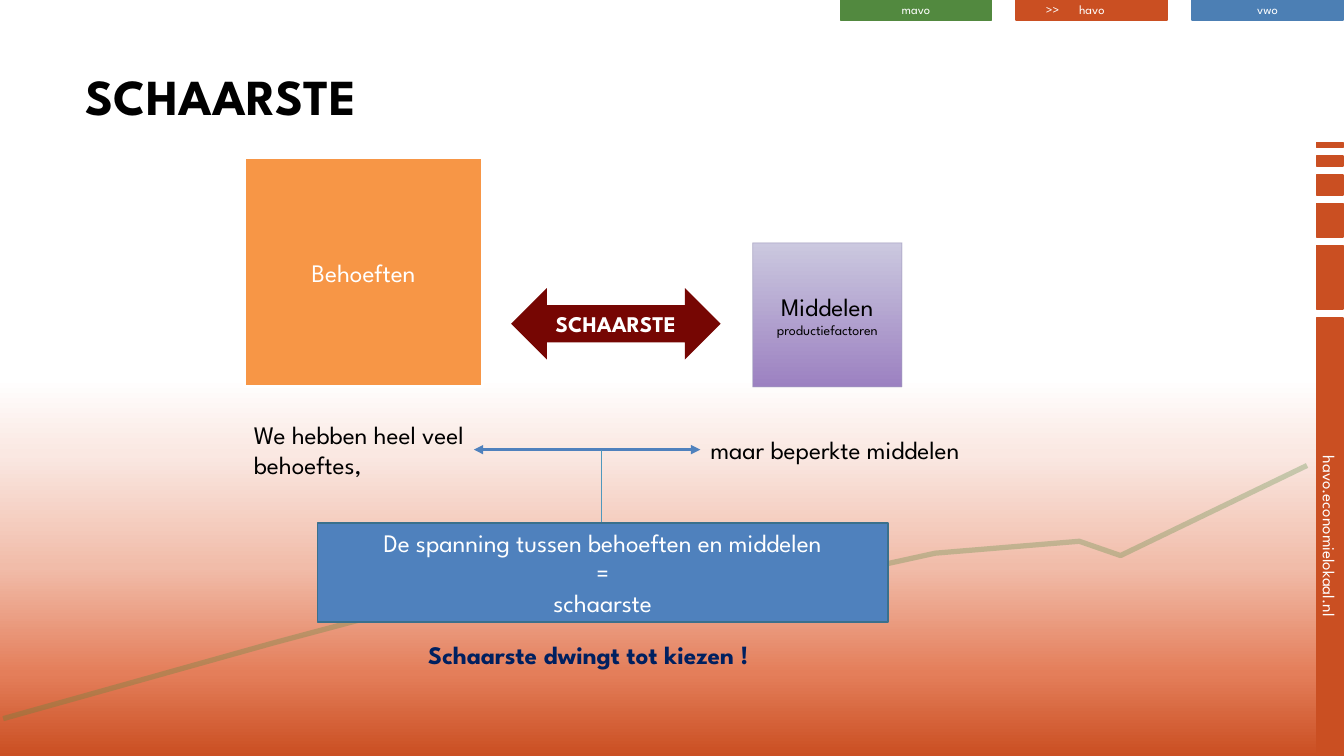
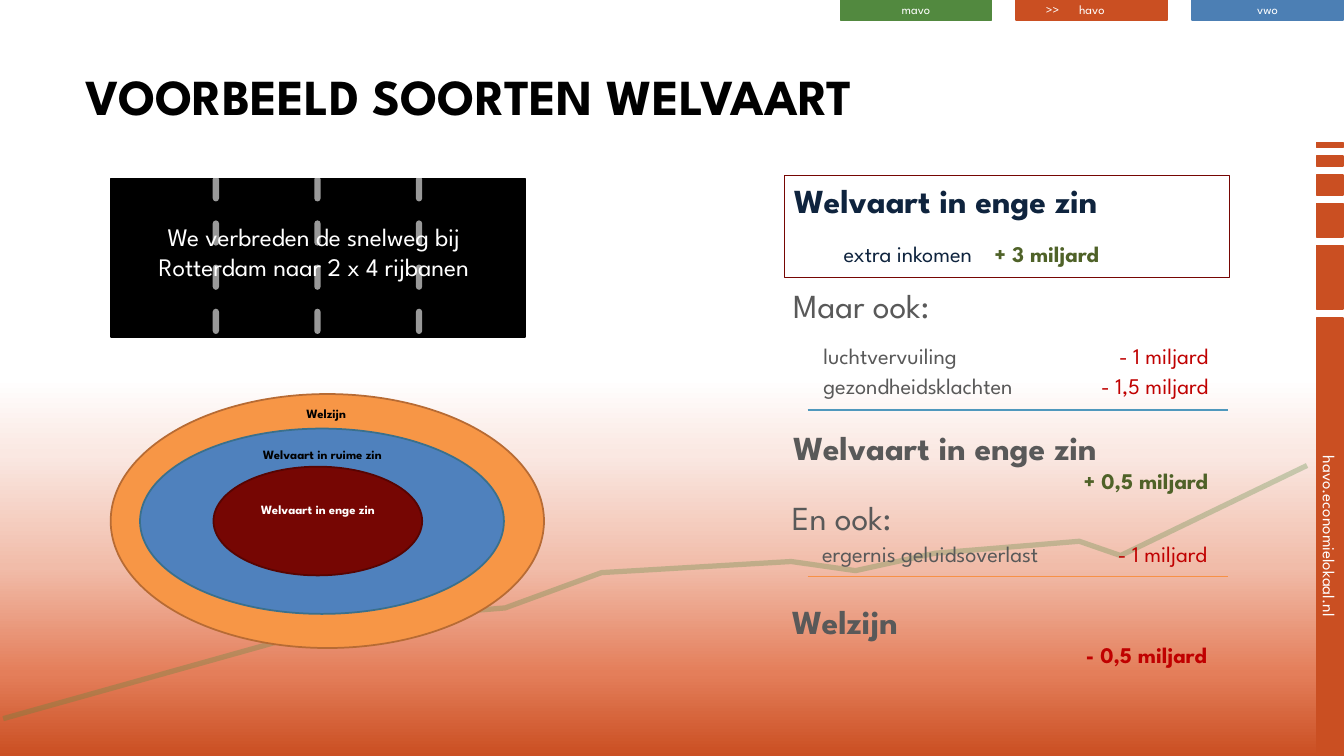
from copy import deepcopy

from lxml import etree
from pptx import Presentation
from pptx import util as u
from pptx.dml.color import RGBColor
from pptx.enum import dml, shapes, text
from pptx.oxml.ns import qn

FONT = "League Spartan"
ORANGE, BLUE, MAROON = "F79646", "4F81BD", "760603"
BRICK, GREEN, STEEL = "CA4F22", "52893F", "4C7FB4"
WHITE, BLACK, GREY = "FFFFFF", "000000", "595959"
RECTANGLE, OVAL = shapes.MSO_SHAPE.RECTANGLE, shapes.MSO_SHAPE.OVAL
STRAIGHT = shapes.MSO_CONNECTOR.STRAIGHT
LEFT, CENTER = text.PP_ALIGN.LEFT, text.PP_ALIGN.CENTER
rgb = RGBColor.from_string


def style(item, fill=None, line=None, width=1.25, opacity=100):
    """Fill and outline a shape or connector, without shadow."""
    if hasattr(item, "fill"):
        if fill:
            item.fill.solid()
            item.fill.fore_color.rgb = rgb(fill)
        else:
            item.fill.background()
    if line:
        item.line.color.rgb = rgb(line)
        item.line.width = u.Pt(width)
        if opacity < 100:
            color = item.element.spPr.find(qn("a:ln")).find(".//" + qn("a:srgbClr"))
            etree.SubElement(color, qn("a:alpha"), val=str(opacity * 1000))
    else:
        item.line.fill.background()
    etree.SubElement(item.element.spPr, qn("a:effectLst"))
    return item


def write(item, words, size, color=WHITE, bold=False, align=CENTER):
    """Write each line of words as one paragraph."""
    frame = item.text_frame
    frame.word_wrap = True
    frame.text = words
    for para in frame.paragraphs:
        para.alignment = align
        para.font.name = FONT
        para.font.size = u.Pt(size)
        para.font.bold = bold
        para.font.color.rgb = rgb(color)
    return frame


deck = Presentation()
deck.slide_width, deck.slide_height = u.Cm(33.87), u.Cm(19.05)

# Layout: background, title place, no footers
layout = deck.slide_layouts.get_by_name("Title Only")
for holder in list(layout.placeholders):
    if holder.placeholder_format.idx:
        holder.element.getparent().remove(holder.element)
    else:
        holder.left, holder.top = u.Cm(1.9), u.Cm(1.27)
        holder.width, holder.height = u.Cm(25.45), u.Cm(2.26)

backdrop = layout.background.fill
backdrop.gradient()
backdrop.gradient_angle = 90
stop_list = layout.element.find(".//" + qn("a:gsLst"))
for _ in range(3):
    stop_list.append(deepcopy(stop_list[0]))
backdrop_stops = [(0, BRICK), (0.11, "E47E5A"), (0.25, "F1BCA9"),
                  (0.4, "FAE8E2"), (0.5, WHITE)]
for stop, (position, color) in zip(backdrop.gradient_stops, backdrop_stops):
    stop.position = position
    stop.color.rgb = rgb(color)

# Pages with their titles
pages = []
for heading in ("SCHAARSTE", "VOORBEELD SOORTEN WELVAART"):
    page = deck.slides.add_slide(layout)
    write(page.shapes.title, heading, 36, BLACK, True, LEFT)
    pages.append(page)
scarcity, welfare = (page.shapes for page in pages)

# Shared furniture, drawn once and moved to the layout
furniture = []
for i, (level, color) in enumerate([("mavo", GREEN), ("havo", BRICK), ("vwo", STEEL)]):
    tab = scarcity.add_shape(RECTANGLE, u.Cm(21.18 + 4.43 * i), 0, u.Cm(3.81), u.Cm(0.51))
    style(tab, color, color)
    frame = write(tab, level, 9)
    frame.margin_top, frame.margin_bottom = 0, u.Cm(0.05)
    furniture.append(tab)

bar_top = 3.59
for height in (0.13, 0.25, 0.5, 0.84, 1.6, 11):
    bar = scarcity.add_shape(RECTANGLE, u.Cm(33.18), u.Cm(bar_top), u.Cm(0.66), u.Cm(height))
    furniture.append(style(bar, BRICK, BRICK))
    bar_top += height + 0.22
frame = write(bar, "havo.economielokaal.nl", 12)
frame.margin_left = frame.margin_right = frame.margin_top = frame.margin_bottom = 0
bar.element.txBody.bodyPr.set("vert", "vert")

# Trend points in hundredths of a centimetre
trend = scarcity.build_freeform(3294, 1173, scale=u.Cm(0.01))
trend.add_line_segments([(2824, 1400), (2720, 1364), (2357, 1394), (2156, 1438),
                         (1994, 1415), (1516, 1443), (1273, 1532), (907, 1562),
                         (686, 1621), (8, 1811)], close=False)
furniture.append(style(trend.convert_to_shape(), line=GREEN, width=3.75, opacity=30))

marker = scarcity.add_textbox(u.Cm(26.11), u.Cm(-0.08), u.Cm(1.2), u.Cm(0.64))
write(marker, ">>", 9, align=LEFT)
furniture.append(marker)
for item in furniture:
    layout.shapes.element.append(item.element)

# Scarcity: needs, means and the arrow between them
needs = scarcity.add_shape(RECTANGLE, u.Cm(6.17), u.Cm(3.96), u.Cm(5.99), u.Cm(5.79))
write(style(needs, ORANGE, WHITE, 2.25), "Behoeften", 18)

means = scarcity.add_shape(RECTANGLE, u.Cm(18.97), u.Cm(6.12), u.Cm(3.76), u.Cm(3.63))
style(means, line="A29DBE", width=0.75, opacity=60)
means.fill.gradient()
means.fill.gradient_angle = 270
for stop, position, color in zip(means.fill.gradient_stops, (0, 1), ("CBC8DF", "9C81C1")):
    stop.position = position
    stop.color.rgb = rgb(color)
frame = write(means, "Middelen\nproductiefactoren", 18, BLACK)
frame.paragraphs[1].font.size = u.Pt(10)

arrow = scarcity.add_shape(shapes.MSO_SHAPE.LEFT_RIGHT_ARROW,
                           u.Cm(12.88), u.Cm(7.26), u.Cm(5.28), u.Cm(1.8))
arrow.adjustments[0], arrow.adjustments[1] = 0.52, 0.5
write(style(arrow, MAROON), "SCHAARSTE", 16, bold=True)

# Scarcity: the sentence and its conclusion
for left, top, width, height, words, color, bold in [
    (6.15, 10.44, 5.79, 1.8, "We hebben heel veel behoeftes,", BLACK, False),
    (17.65, 10.82, 8.36, 1.02, "maar beperkte middelen", BLACK, False),
    (10.54, 15.98, 9.45, 1.02, "Schaarste dwingt tot kiezen !", "002060", True),
]:
    box = scarcity.add_textbox(u.Cm(left), u.Cm(top), u.Cm(width), u.Cm(height))
    write(box, words, 18, color, bold, LEFT)

span_line = scarcity.add_connector(STRAIGHT, u.Cm(11.94), u.Cm(11.33), u.Cm(17.65), u.Cm(11.33))
style(span_line, line=BLUE, width=2.25)
for end in ("a:headEnd", "a:tailEnd"):
    etree.SubElement(span_line.element.spPr.find(qn("a:ln")), qn(end), type="triangle")
stem = scarcity.add_connector(STRAIGHT, u.Cm(15.16), u.Cm(11.33), u.Cm(15.16), u.Cm(13.18))
style(stem, line="4F98BD")

tension = scarcity.add_shape(RECTANGLE, u.Cm(8), u.Cm(13.18), u.Cm(14.38), u.Cm(2.49))
write(style(tension, BLUE, "3A708C"),
      "De spanning tussen behoeften en middelen\n=\nschaarste", 18)

# Welfare: motorway with lane markings
road = welfare.add_shape(RECTANGLE, u.Cm(2.79), u.Cm(4.5), u.Cm(10.44), u.Cm(3.99))
style(road, BLACK, BLACK)
for i in range(3):
    x = u.Cm(5.44 + 2.56 * i)
    lane = welfare.add_connector(STRAIGHT, x, u.Cm(4.52), x, u.Cm(8.71))
    style(lane, line=WHITE, width=4.5, opacity=60)
    lane.line.dash_style = dml.MSO_LINE.DASH
    lane.element.spPr.find(qn("a:ln")).set("cap", "rnd")
caption = welfare.add_textbox(u.Cm(2.64), u.Cm(5.44), u.Cm(10.54), u.Cm(1.8))
write(caption, "We verbreden de snelweg bij Rotterdam naar 2 x 4 rijbanen", 18)

# Welfare: nested ellipses and their labels
for left, top, width, height, fill, line in [
    (2.79, 9.93, 10.92, 6.4, ORANGE, "B76B34"),
    (3.53, 10.8, 9.17, 4.67, BLUE, "3A708C"),
    (5.38, 11.76, 5.26, 2.74, MAROON, "570402"),
]:
    ring = welfare.add_shape(OVAL, u.Cm(left), u.Cm(top), u.Cm(width), u.Cm(height))
    style(ring, fill, line)
write(ring, "Welvaart in enge zin", 9, bold=True).margin_bottom = u.Cm(0.7)
for left, top, words in [(6.15, 11.13, "Welvaart in ruime zin"), (6.25, 10.11, "Welzijn")]:
    label = welfare.add_textbox(u.Cm(left), u.Cm(top), u.Cm(3.94), u.Cm(0.64))
    write(label, words, 9, BLACK, True)

# Welfare: ledger of gains and losses
framed = welfare.add_shape(RECTANGLE, u.Cm(19.76), u.Cm(4.42), u.Cm(11.23), u.Cm(2.57))
style(framed, line=MAROON, width=0.75)
framed.text_frame.vertical_anchor = text.MSO_ANCHOR.TOP
broad = welfare.add_textbox(u.Cm(19.74), u.Cm(7.06), u.Cm(12.7), u.Cm(5.64))
wellbeing = welfare.add_textbox(u.Cm(19.71), u.Cm(12.4), u.Cm(12.7), u.Cm(4.57))

narrow_tabs = [(1.25, "l"), (5.05, "l")]
wide_tabs = [(0.76, "l"), (10.46, "r")]
# Each row: label, amount, bold, space before
ledgers = [
    (framed, "0F243E", narrow_tabs, [
        ("Welvaart in enge zin", "", True, 0),
        ("extra inkomen", "+ 3 miljard", True, 14)]),
    (broad, GREY, wide_tabs, [
        ("Maar ook:", "", False, 0),
        ("luchtvervuiling", "- 1 miljard", False, 12),
        ("gezondheidsklachten", "- 1,5 miljard", False, 2),
        ("Welvaart in enge zin", "", True, 20),
        ("", "+ 0,5 miljard", True, 0)]),
    (wellbeing, GREY, wide_tabs, [
        ("En ook:", "", False, 0),
        ("ergernis geluidsoverlast", "- 1 miljard", False, 2),
        ("Welzijn", "", True, 24),
        ("", "- 0,5 miljard", True, 0)]),
]
for box, color, tabs, rows in ledgers:
    frame = box.text_frame
    frame.word_wrap = True
    for i, (label, amount, bold, gap) in enumerate(rows):
        para = frame.add_paragraph() if i else frame.paragraphs[0]
        para.alignment = LEFT
        if gap:
            para.space_before = u.Pt(gap)
        if amount:
            tab_list = etree.SubElement(para._p.get_or_add_pPr(), qn("a:tabLst"))
            for position, side in tabs:
                etree.SubElement(tab_list, qn("a:tab"), pos=str(u.Cm(position)), algn=side)
        para.font.name = FONT
        para.font.size = u.Pt(16 if amount else 24)
        para.font.bold = bold and not amount
        para.font.color.rgb = rgb(color)
        span = para.add_run()
        span.text = f"\t{label}\t" if amount else label
        if amount:
            span = para.add_run()
            span.text = amount
            span.font.bold = bold
            span.font.color.rgb = rgb("4F6228" if amount.startswith("+") else "C00000")

for y, color in [(10.34, "4F98BD"), (14.53, "F79146")]:
    rule = welfare.add_connector(STRAIGHT, u.Cm(20.35), u.Cm(y), u.Cm(30.94), u.Cm(y))
    style(rule, line=color)

deck.save("out.pptx")
